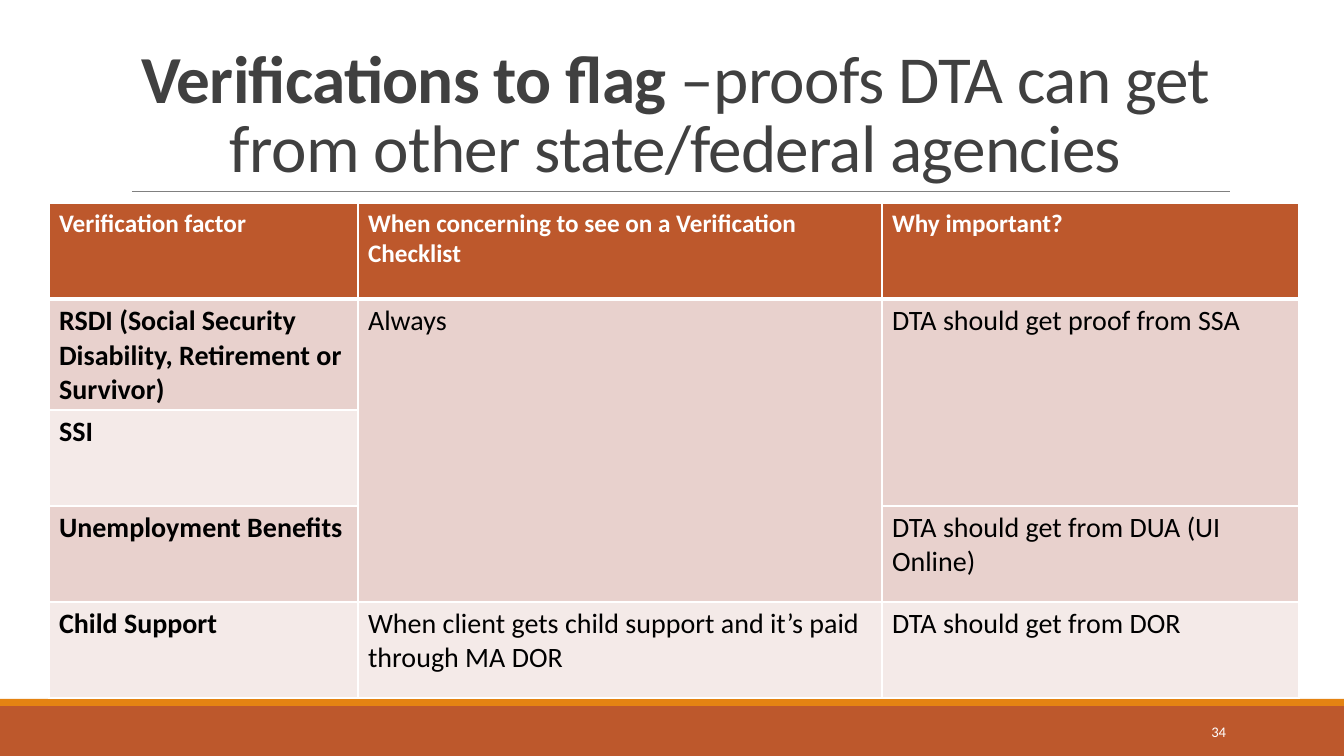
import pptx
import pptx.dml.color
import pptx.enum.shapes
import pptx.enum.text
import pptx.oxml
import pptx.oxml.ns
import pptx.util

FONT = "Calibri"
RUST, ORANGE, WHITE = "BD582C", "E48312", "FFFFFF"
BANDS = ["E8D1CD", "F4EAE8"]
HEADER = ["Verification factor", "When concerning to see on a Verification Checklist", "Why important?"]
ROWS = [
    ["RSDI (Social Security Disability, Retirement or Survivor)", "Always", "DTA should get proof from SSA"],
    ["SSI", "", ""],
    ["Unemployment Benefits", "", "DTA should get from DUA (UI Online)"],
    ["Child Support", "When client gets child support and it’s paid through MA DOR", "DTA should get from DOR"],
]


def px(n):
    return pptx.util.Emu(round(n * 914400 / 100.8))


def rgb(value):
    return pptx.dml.color.RGBColor.from_string(value)


def style(r, size, color, bold=False):
    r.font.name = FONT
    r.font.size = pptx.util.Pt(size)
    r.font.color.rgb = rgb(color)
    r.font.bold = bold


def add_bar(s, x, y, w, h, color):
    sp = s.shapes.add_shape(pptx.enum.shapes.MSO_SHAPE.RECTANGLE, px(x), px(y), px(w), px(h))
    sp.shadow.inherit = False
    sp.fill.solid()
    sp.fill.fore_color.rgb = rgb(color)
    sp.line.fill.background()


def add_footer(s, x, y, w, h):
    # Rust band with a thin orange strip on top and the page number
    add_bar(s, x, y + 7, w, h - 7, RUST)
    add_bar(s, x, y, w, 7, ORANGE)
    tb = s.shapes.add_textbox(px(x + 1092), px(y + 13), px(144), px(40))
    tf = tb.text_frame
    tf.word_wrap = True
    tf.vertical_anchor = pptx.enum.text.MSO_ANCHOR.MIDDLE
    tf.text = "34"
    p = tf.paragraphs[0]
    p.alignment = pptx.enum.text.PP_ALIGN.RIGHT
    style(p.runs[0], 10.5, WHITE)


def add_title(s, x, y, w, h):
    # Rule under the title
    line = s.shapes.add_connector(pptx.enum.shapes.MSO_CONNECTOR.STRAIGHT,
                                  px(x + 11), px(y + h), px(x + w), px(y + h))
    line.line.color.rgb = rgb("808080")
    line.line.width = pptx.util.Pt(0.5)
    line._element.spPr.append(pptx.oxml.parse_xml(
        f'<a:effectLst {pptx.oxml.ns.nsdecls("a")}/>'))

    # Title with a bold lead
    sp = s.shapes.title
    sp.left, sp.top, sp.width, sp.height = px(x), px(y), px(w), px(h)
    tf = sp.text_frame
    tf.word_wrap = True
    tf.auto_size = pptx.enum.text.MSO_AUTO_SIZE.NONE
    tf.vertical_anchor = pptx.enum.text.MSO_ANCHOR.BOTTOM
    p = tf.paragraphs[0]
    p.alignment = pptx.enum.text.PP_ALIGN.CENTER
    p.line_spacing = 0.85
    for text, bold in [("Verifications to flag ", True),
                       ("–proofs DTA can get from other state/federal agencies", False)]:
        r = p.add_run()
        r.text = text
        style(r, 48, "404040", bold)
        r.font._element.set("spc", "-50")


def format_cell(cell, text, fill, size, color, bold, bottom):
    cell.fill.solid()
    cell.fill.fore_color.rgb = rgb(fill)
    tcPr = cell._tc.get_or_add_tcPr()
    for i, (side, width) in enumerate([("L", 1), ("R", 1), ("T", 1), ("B", bottom)]):
        tcPr.insert(i, pptx.oxml.parse_xml(
            f'<a:ln{side} {pptx.oxml.ns.nsdecls("a")} w="{width * 12700}">'
            f'<a:solidFill><a:srgbClr val="{WHITE}"/></a:solidFill></a:ln{side}>'))
    if text:
        cell.text_frame.text = text
        style(cell.text_frame.paragraphs[0].runs[0], size, color, bold)


def add_factor_table(s, x, y, widths, row_h):
    n = len(ROWS) + 1
    table = s.shapes.add_table(n, len(widths), px(x), px(y), px(sum(widths)), px(n * row_h)).table
    for col, w in zip(table.columns, widths):
        col.width = px(w)
    for row in table.rows:
        row.height = px(row_h)
    # Header, then banded rows with a bold first column
    for c, text in enumerate(HEADER):
        format_cell(table.cell(0, c), text, RUST, 18, WHITE, True, 3)
    for i, row in enumerate(ROWS):
        for c, text in enumerate(row):
            format_cell(table.cell(i + 1, c), text, BANDS[i % 2], 20, "000000", c == 0, 1)
    # Answers shared by several factors
    table.cell(1, 1).merge(table.cell(3, 1))
    table.cell(1, 2).merge(table.cell(2, 2))


def main():
    prs = pptx.Presentation()
    prs.slide_width, prs.slide_height = px(1344), px(756)
    s = prs.slides.add_slide(prs.slide_layouts[5])
    s.background.fill.solid()
    s.background.fill.fore_color.rgb = rgb(WHITE)
    add_footer(s, 0, 699, 1344, 57)
    add_title(s, 121, 31, 1109, 160)
    add_factor_table(s, 49, 203, [309, 524, 417], 96)
    prs.save("out.pptx")


if __name__ == "__main__":
    main()
